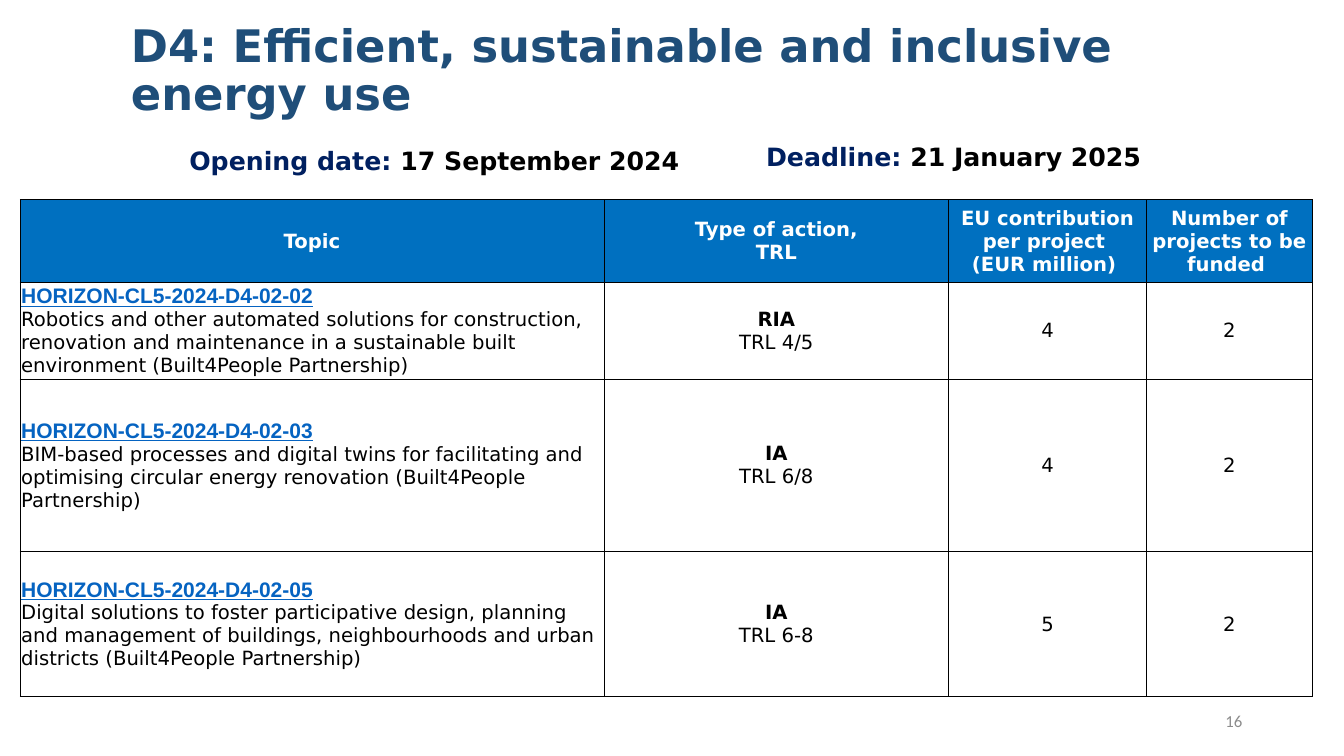
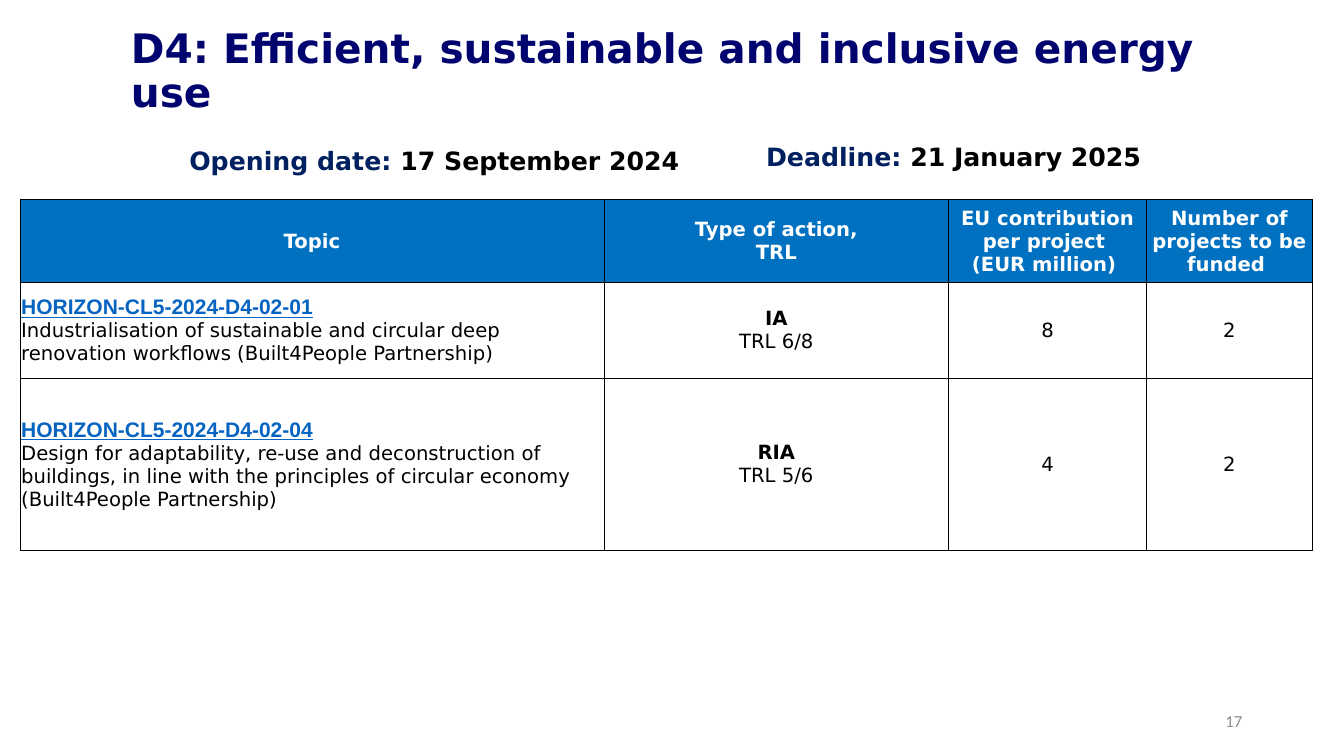
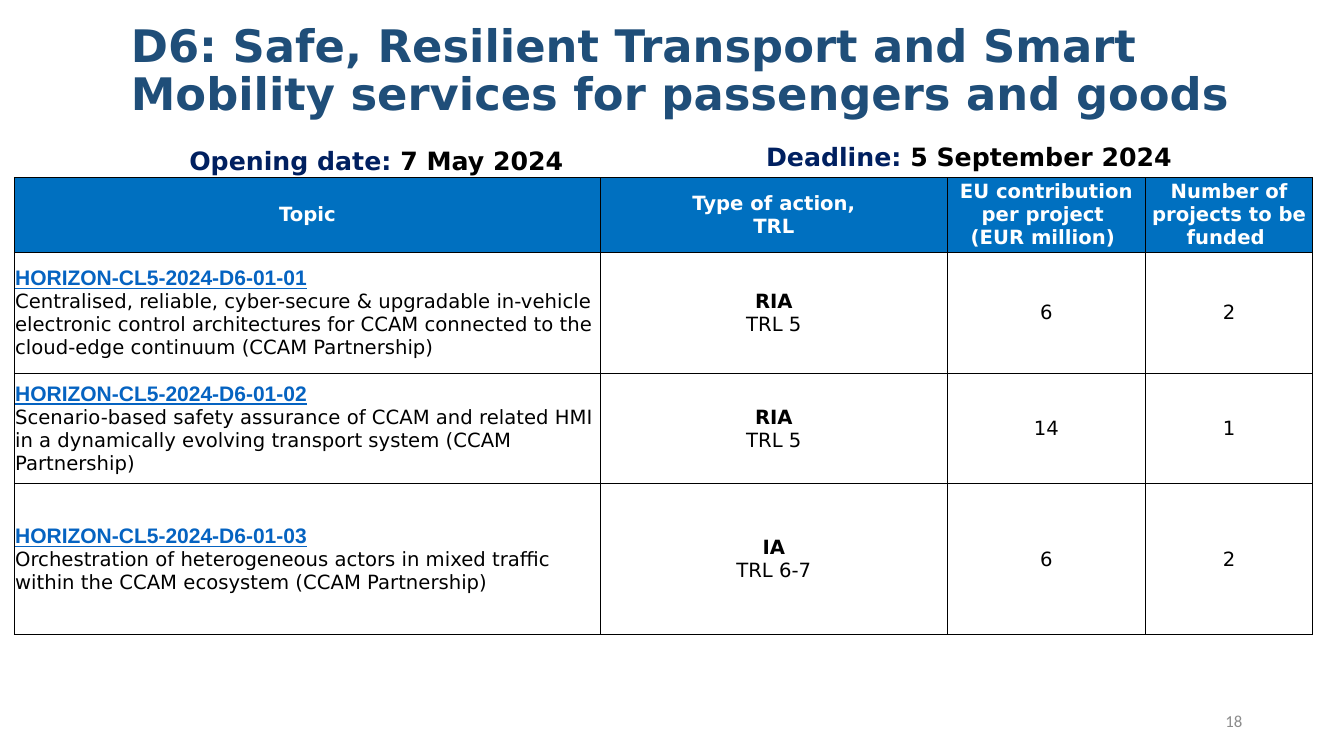
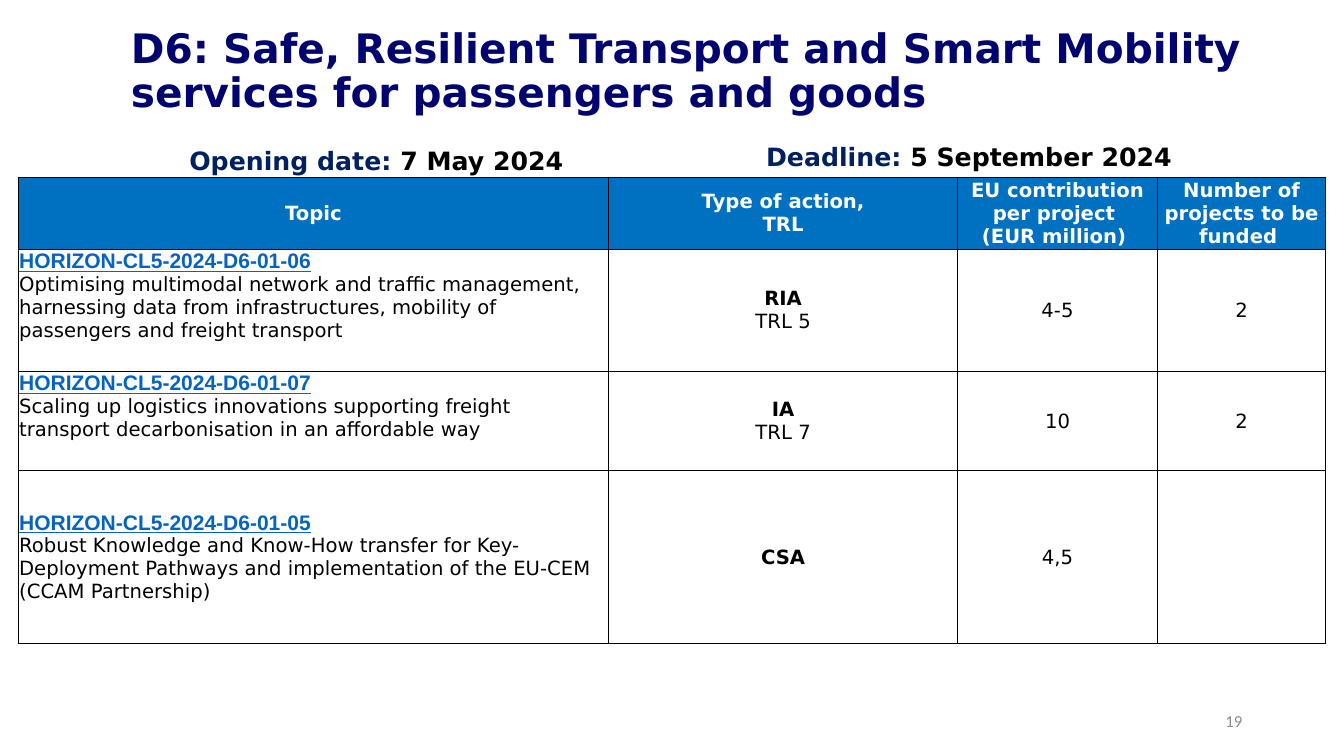
import dataclasses

import pptx
import pptx.dml.color
import pptx.enum.text
import pptx.oxml
import pptx.oxml.ns
import pptx.util

Inches = pptx.util.Inches
Pt = pptx.util.Pt
ALIGN = pptx.enum.text.PP_ALIGN
ANCHOR = pptx.enum.text.MSO_ANCHOR
FIT = pptx.enum.text.MSO_AUTO_SIZE


def style(name, size, color, **more):
    return {"name": name, "size": Pt(size), "color": color, **more}


@dataclasses.dataclass(frozen=True)
class Theme:
    sans: str = "DejaVu Sans"
    white: str = "FFFFFF"
    black: str = "000000"
    head: str = "0070C0"
    rule: float = 0.5

    def text(self, kind):
        return {
            "title": style(self.sans, 32, "1F4E79", bold=True),
            "title two": style(self.sans, 29, "01046E", bold=True),
            "label": style(self.sans, 18, "002060", bold=True),
            "date": style(self.sans, 18, self.black, bold=True),
            "page": style("Calibri", 12, "8C8C8C"),
            "head": style(self.sans, 14, self.white, bold=True),
            "code": style("Arial", 15, "0563C1", bold=True, underline=True),
            "body": style(self.sans, 14, self.black, bold=False),
            "strong": style(self.sans, 14, self.black, bold=True),
        }[kind]


THEME = Theme()
COLS = (5.79, 3.42, 1.96, 1.65)
INSETS = {"margin_left": Inches(0.01), "margin_top": Inches(0.01),
          "margin_right": Inches(0.01), "margin_bottom": 0}
HEADS = (
    ("Topic",),
    ("Type of action,", "TRL"),
    ("EU contribution per project ", "(EUR million) "),
    ("Number of projects to be funded ",),
)
D4 = "D4: Efficient, sustainable and inclusive energy use"
D6 = ("D6: Safe, Resilient Transport and Smart Mobility services "
      "for passengers and goods")
D4_DATES = ("17 September 2024", "21 January 2025")
D6_DATES = ("7 May 2024", "5 September 2024")

# Topic rows: code, text, action, TRL, contribution, projects
SLIDES = (
    {"title": D4, "kind": "title", "dates": D4_DATES,
     "box": (0.2, 1.98, 12.82), "rows": (0.82, 0.95, 1.71, 1.44),
     "topics": (
         ("HORIZON-CL5-2024-D4-02-02",
          "Robotics and other automated solutions for construction, "
          "renovation and maintenance in a sustainable built environment "
          "(Built4People Partnership)", "RIA", "TRL 4/5", "4", "2"),
         ("HORIZON-CL5-2024-D4-02-03",
          "BIM-based processes and digital twins for facilitating and "
          "optimising circular energy renovation (Built4People Partnership)",
          "IA", "TRL 6/8", "4", "2"),
         ("HORIZON-CL5-2024-D4-02-05",
          "Digital solutions to foster participative design, planning and "
          "management of buildings, neighbourhoods and urban districts "
          "(Built4People Partnership)", "IA", "TRL 6-8", "5", "2"),
     )},
    {"title": D4, "kind": "title two", "dates": D4_DATES,
     "box": (0.2, 1.98, 12.82), "rows": (0.82, 0.95, 1.71),
     "topics": (
         ("HORIZON-CL5-2024-D4-02-01",
          "Industrialisation of sustainable and circular deep renovation "
          "workflows (Built4People Partnership)", "IA", "TRL 6/8", "8", "2"),
         ("HORIZON-CL5-2024-D4-02-04",
          "Design for adaptability, re-use and deconstruction of buildings, "
          "in line with the principles of circular economy "
          "(Built4People Partnership)", "RIA", "TRL 5/6", "4", "2"),
     )},
    {"title": D6, "kind": "title", "dates": D6_DATES,
     "box": (0.14, 1.76, 12.88), "rows": (0.74, 1.2, 1.1, 1.49),
     "topics": (
         ("HORIZON-CL5-2024-D6-01-01",
          "Centralised, reliable, cyber-secure & upgradable in-vehicle "
          "electronic control architectures for CCAM connected to the "
          "cloud-edge continuum (CCAM Partnership)",
          "RIA", "TRL 5", "6", "2"),
         ("HORIZON-CL5-2024-D6-01-02",
          "Scenario-based safety assurance of CCAM and related HMI in a "
          "dynamically evolving transport system (CCAM Partnership)",
          "RIA", "TRL 5", "14", "1"),
         ("HORIZON-CL5-2024-D6-01-03",
          "Orchestration of heterogeneous actors in mixed traffic within "
          "the CCAM ecosystem (CCAM Partnership)",
          "IA", "TRL 6-7", "6", "2"),
     )},
    {"title": D6, "kind": "title two", "dates": D6_DATES,
     "box": (0.18, 1.76, 12.97), "rows": (0.7, 1.21, 0.99, 1.71),
     "top": (1, 2),
     "topics": (
         ("HORIZON-CL5-2024-D6-01-06",
          "Optimising multimodal network and traffic management, harnessing "
          "data from infrastructures, mobility of passengers and freight "
          "transport", "RIA", "TRL 5", "4-5", "2"),
         ("HORIZON-CL5-2024-D6-01-07",
          "Scaling up logistics innovations supporting freight transport "
          "decarbonisation in an affordable way", "IA", "TRL 7", "10", "2"),
         ("HORIZON-CL5-2024-D6-01-05",
          "Robust Knowledge and Know-How transfer for Key-Deployment "
          "Pathways and implementation of the EU-CEM (CCAM Partnership)",
          "CSA", "", "4,5", ""),
     )},
)


def assign(item, values):
    for name, value in values.items():
        setattr(item, name, value)


def rgb(color):
    return pptx.dml.color.RGBColor.from_string(color)


def write(frame, lines, **format):
    """Fill a frame; each line is a list of (text, style kind) runs."""
    for i, runs in enumerate(lines):
        para = frame.paragraphs[0] if i == 0 else frame.add_paragraph()
        assign(para, format)
        for text, kind in runs:
            run = para.add_run()
            run.text = text
            look = THEME.text(kind)
            run.font.color.rgb = rgb(look.pop("color"))
            assign(run.font, look)


def add_text(slide, box, runs, frame=None, **format):
    shape = slide.shapes.add_textbox(*map(Inches, box))
    assign(shape.text_frame, {"word_wrap": True, **(frame or {})})
    write(shape.text_frame, [runs], **format)


def add_rules(cell):
    """Draw the four cell borders, which come before the fill in the XML."""
    props = cell._tc.get_or_add_tcPr()
    for i, side in enumerate("LRTB"):
        props.insert(i, pptx.oxml.parse_xml(
            f'<a:ln{side} {pptx.oxml.ns.nsdecls("a")} w="{Pt(THEME.rule)}">'
            f'<a:solidFill><a:srgbClr val="{THEME.black}"/></a:solidFill>'
            f'</a:ln{side}>'))


def fill_cell(cell, lines, fill, align=ALIGN.CENTER, anchor=ANCHOR.MIDDLE):
    assign(cell, {**INSETS, "vertical_anchor": anchor})
    cell.fill.solid()
    cell.fill.fore_color.rgb = rgb(fill)
    add_rules(cell)
    lines = [[run] for run in lines if run[0]]
    write(cell.text_frame, lines, alignment=align)


def add_topics(slide, box, rows, topics, top=()):
    """Draw the topic table; rows named in top hold their topic at the top."""
    left, y, width = box
    frame = slide.shapes.add_table(
        len(rows), len(COLS), *map(Inches, (left, y, width, sum(rows))))
    table = frame.table
    table.horz_banding = False
    for col, share in zip(table.columns, COLS):
        col.width = Inches(width * share / sum(COLS))
    for row, height in zip(table.rows, rows):
        row.height = Inches(height)
    for j, lines in enumerate(HEADS):
        fill_cell(table.cell(0, j), [(t, "head") for t in lines], THEME.head)
    for i, (code, text, action, level, money, count) in enumerate(topics, 1):
        fill_cell(table.cell(i, 0), [(code, "code"), (text, "body")],
                  THEME.white, ALIGN.LEFT,
                  ANCHOR.TOP if i in top else ANCHOR.MIDDLE)
        cells = ([(action, "strong"), (level, "body")],
                 [(money, "body")], [(count, "body")])
        for j, lines in enumerate(cells, 1):
            fill_cell(table.cell(i, j), lines, THEME.white)


def add_dates(slide, opening, deadline):
    grow = {"auto_size": FIT.SHAPE_TO_FIT_TEXT}
    for box, label, date in (
            ((7.5, 1.35, 4.8, 0.4), "Deadline: ", deadline),
            ((1.78, 1.39, 6.64, 0.41), "Opening date: ", opening)):
        add_text(slide, box, [(label, "label"), (date, "date")], grow)


def add_slide(deck, data, page):
    slide = deck.slides.add_slide(deck.slide_layouts[6])
    middle = {"vertical_anchor": ANCHOR.MIDDLE}
    add_text(slide, (1.2, -0.01, 11.5, 1.45), [(data["title"], data["kind"])],
             middle, line_spacing=0.9)
    add_text(slide, (9.42, 6.95, 3, 0.4), [(str(page), "page")],
             middle, alignment=ALIGN.RIGHT)
    add_topics(slide, data["box"], data["rows"], data["topics"],
               data.get("top", ()))
    add_dates(slide, *data["dates"])


def main():
    deck = pptx.Presentation()
    assign(deck, {"slide_width": Inches(13.33), "slide_height": Inches(7.5)})
    for page, data in enumerate(SLIDES, 16):
        add_slide(deck, data, page)
    deck.save("out.pptx")


if __name__ == "__main__":
    main()
